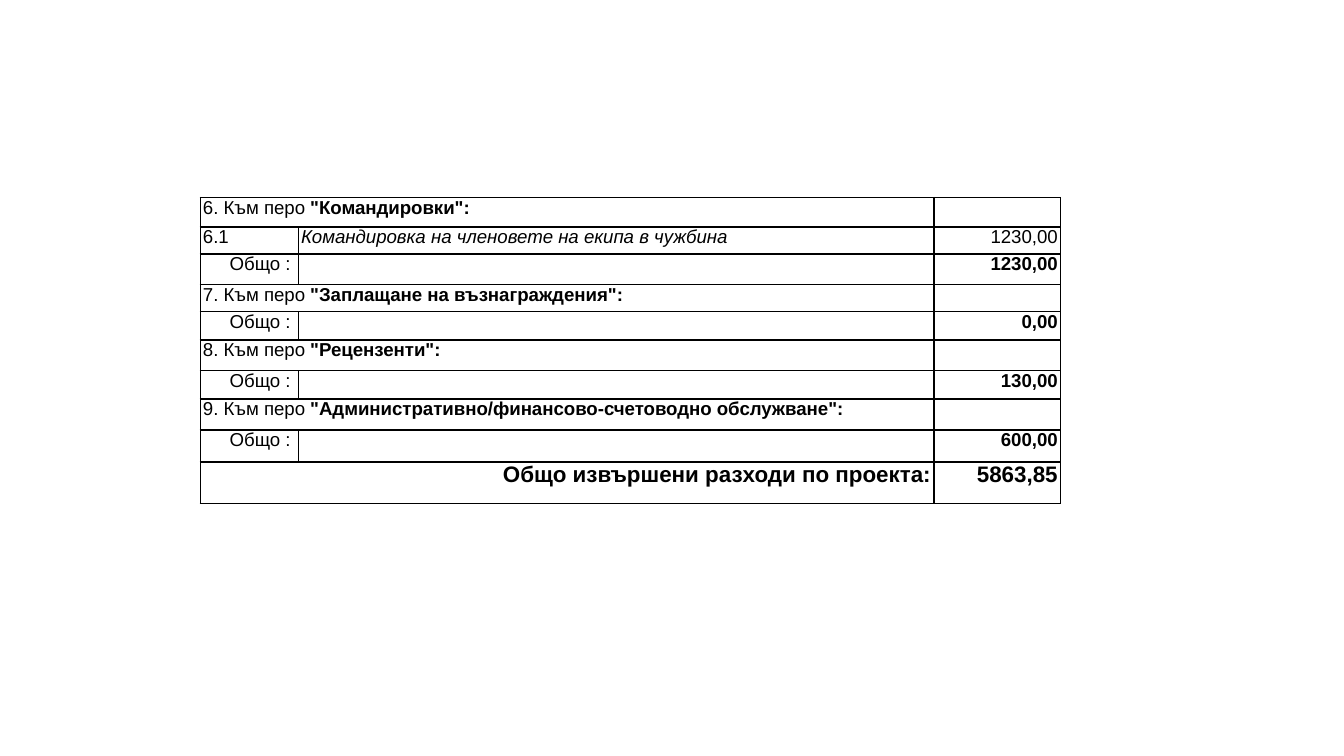
from dataclasses import dataclass

from lxml.etree import SubElement
from pptx import Presentation
from pptx.dml.color import RGBColor
from pptx.enum.text import PP_ALIGN as Align
from pptx.oxml.ns import qn
from pptx.table import Table, _Cell as Cell
from pptx.util import Inches, Pt

BLACK = RGBColor(0, 0, 0)
FONT = "Arial"
THIN, THICK = 0.75, 1.5
SLIDE_WIDTH = 10
SLIDE_HEIGHT = SLIDE_WIDTH * 9 / 16
COLUMN_WIDTHS = (0.73, 4.73, 0.94)


@dataclass(frozen=True)
class Span:
    text: str
    bold: bool = False
    italic: bool = False
    size: int = 10


@dataclass(frozen=True)
class Entry:
    height: float
    label: tuple[Span, ...]
    detail: tuple[Span, ...] = ()
    amount: tuple[Span, ...] = ()
    merged: bool = False
    label_align: Align = Align.LEFT
    top: float = THIN
    bottom: float = THIN
    divider: float = THIN


def heading(height: float, number: int, name: str) -> Entry:
    label = (Span(f"{number}. Към перо "), Span(f'"{name}":', bold=True))
    return Entry(height, label, merged=True)


def subtotal(height: float, amount: str, bottom: float = THIN) -> Entry:
    return Entry(height, (Span("Общо : "),), amount=(Span(amount, bold=True),),
                 label_align=Align.RIGHT, bottom=bottom)


ENTRIES = (
    heading(0.22, 6, "Командировки"),
    Entry(0.2, (Span("6.1"),),
          (Span("Командировка на членовете на екипа в чужбина", italic=True),),
          (Span("1230,00"),)),
    subtotal(0.23, "1230,00"),
    heading(0.2, 7, "Заплащане на възнаграждения"),
    subtotal(0.21, "0,00"),
    heading(0.23, 8, "Рецензенти"),
    subtotal(0.21, "130,00"),
    heading(0.23, 9, "Административно/финансово-счетоводно обслужване"),
    subtotal(0.24, "600,00", bottom=THICK),
    Entry(0.31, (Span("Общо извършени разходи по проекта:", bold=True, size=12),),
          amount=(Span("5863,85", bold=True, size=12),), merged=True,
          label_align=Align.RIGHT, top=THICK, divider=THICK),
)


def set_borders(cell: Cell, left: float, right: float, top: float, bottom: float) -> None:
    properties = cell._tc.get_or_add_tcPr()
    for side, width in zip("LRTB", (left, right, top, bottom)):
        line = SubElement(properties, qn(f"a:ln{side}"), w=str(Pt(width)))
        fill = SubElement(line, qn("a:solidFill"))
        SubElement(fill, qn("a:srgbClr"), val=str(BLACK))


def write_cell(cell: Cell, spans: tuple[Span, ...], align: Align) -> None:
    cell.margin_left = cell.margin_right = Inches(0.02)
    cell.margin_top = cell.margin_bottom = 0
    paragraph = cell.text_frame.paragraphs[0]
    paragraph.alignment = align
    for span in spans:
        run = paragraph.add_run()
        run.text = span.text
        run.font.name = FONT
        run.font.size = Pt(span.size)
        run.font.bold = span.bold
        run.font.italic = span.italic
        run.font.color.rgb = BLACK
    if not spans:
        SubElement(paragraph._p, qn("a:endParaRPr"), sz="1000")


def write_entry(table: Table, row: int, entry: Entry) -> None:
    table.rows[row].height = Inches(entry.height)
    label, detail, amount = (table.cell(row, column) for column in range(3))
    write_cell(label, entry.label, entry.label_align)
    write_cell(detail, entry.detail, Align.LEFT)
    write_cell(amount, entry.amount, Align.RIGHT)
    label_right = entry.divider if entry.merged else THIN
    set_borders(label, THIN, label_right, entry.top, entry.bottom)
    set_borders(detail, THIN, entry.divider, entry.top, entry.bottom)
    set_borders(amount, entry.divider, THIN, entry.top, entry.bottom)
    for cell in (label, detail, amount):
        cell.fill.background()
    if entry.merged:
        label.merge(detail)


def main() -> None:
    presentation = Presentation()
    presentation.slide_width = Inches(SLIDE_WIDTH)
    presentation.slide_height = Inches(SLIDE_HEIGHT)
    slide = presentation.slides.add_slide(presentation.slide_layouts[6])
    expenses = slide.shapes.add_table(
        len(ENTRIES), len(COLUMN_WIDTHS), Inches(1.49), Inches(1.47),
        Inches(sum(COLUMN_WIDTHS)), Inches(sum(entry.height for entry in ENTRIES))).table
    expenses.first_row = False
    expenses.horz_banding = False
    for column, width in zip(expenses.columns, COLUMN_WIDTHS):
        column.width = Inches(width)
    for row, entry in enumerate(ENTRIES):
        write_entry(expenses, row, entry)
    presentation.save("out.pptx")


if __name__ == "__main__":
    main()
